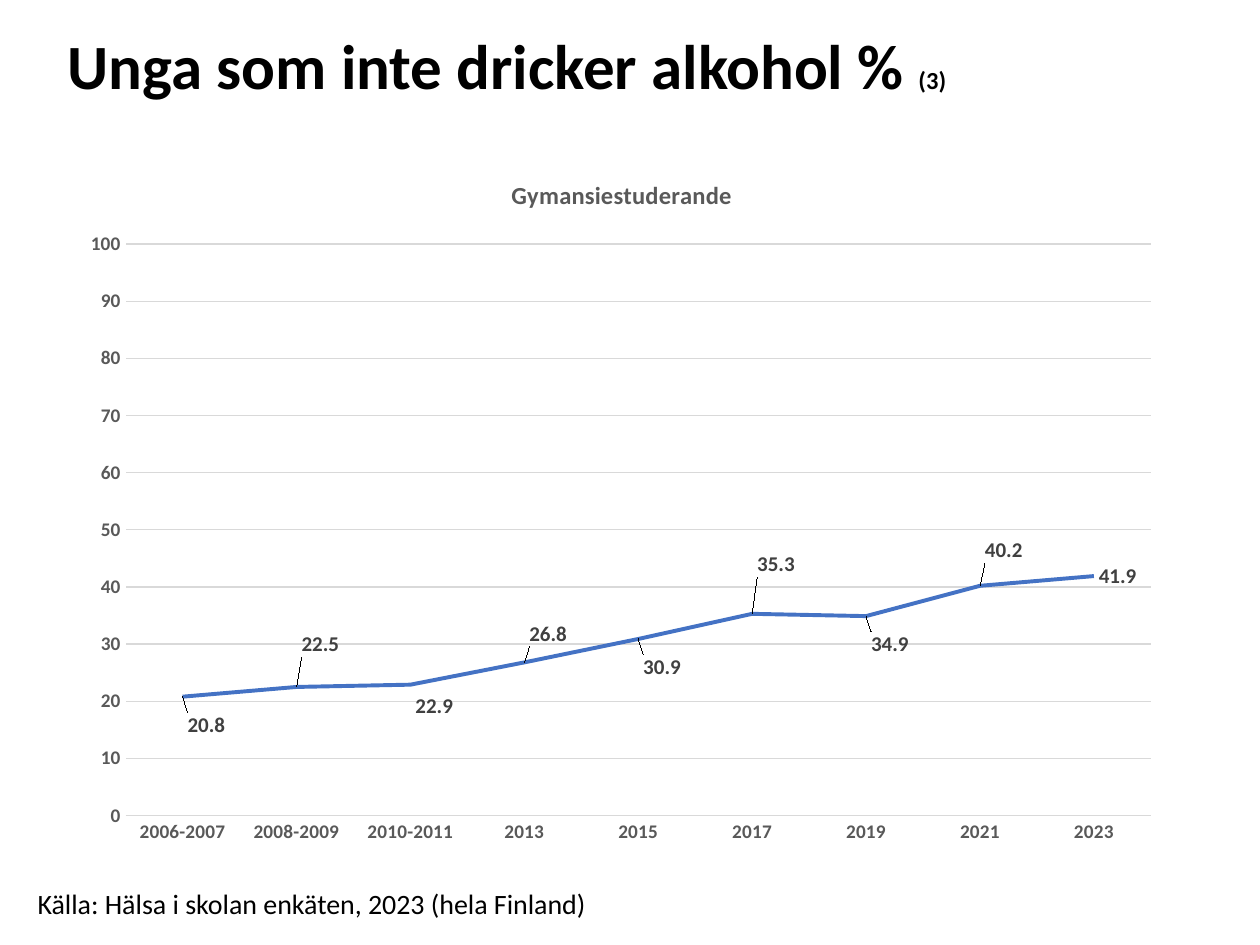
from lxml.etree import SubElement
from pptx import Presentation
from pptx.chart.data import CategoryChartData
from pptx.dml.color import RGBColor
from pptx.enum.chart import XL_CHART_TYPE as ChartType
from pptx.enum.chart import XL_LABEL_POSITION as LabelPos
from pptx.enum.chart import XL_TICK_MARK as Tick
from pptx.oxml import parse_xml
from pptx.oxml.ns import nsdecls, qn
from pptx.util import Inches, Pt

TITLE = [("Unga som inte dricker alkohol % ", 36), ("(3)", 14)]
SOURCE = "Källa: Hälsa i skolan enkäten, 2023 (hela Finland)"
CHART_TITLE = "Gymansiestuderande"
RATES = [
    ("2006-2007", 20.8, 0.04),
    ("2008-2009", 22.5, -0.06),
    ("2010-2011", 22.9, 0.03),
    ("2013", 26.8, -0.04),
    ("2015", 30.9, 0.04),
    ("2017", 35.3, -0.07),
    ("2019", 34.9, 0.04),
    ("2021", 40.2, -0.05),
    ("2023", 41.9, 0),
]
PLOT = {"x": 0.05, "y": 0.13, "w": 0.93, "h": 0.81}

BLACK = RGBColor(0, 0, 0)
LABEL = RGBColor(0x40, 0x40, 0x40)
GREY = RGBColor(0x59, 0x59, 0x59)
GRID = RGBColor(0xD9, 0xD9, 0xD9)
BLUE = RGBColor(0x44, 0x72, 0xC4)
FONT = "Calibri"


def set_font(font, size, color, bold=False):
    font.name, font.size, font.bold = FONT, Pt(size), bold
    font.color.rgb = color


def add_text(slide, box, runs, bold=False):
    tf = slide.shapes.add_textbox(*map(Inches, box)).text_frame
    tf.word_wrap = True
    p = tf.paragraphs[0]
    set_font(p.font, runs[0][1], BLACK, bold)
    for text, size in runs:
        r = p.add_run()
        r.text = text
        r.font.size = Pt(size)
    return p


def manual_layout(**values):
    layout = parse_xml(f"<c:layout {nsdecls('c')}><c:manualLayout/></c:layout>")
    for tag, value in values.items():
        SubElement(layout[0], qn(f"c:{tag}")).set("val", str(value))
    return layout


def style_line(line, color, width):
    line.color.rgb = color
    line.width = Pt(width)


def add_rate_chart(slide, box):
    data = CategoryChartData(number_format="0.0")
    data.categories = [year for year, _, _ in RATES]
    data.add_series("Series 1", [rate for _, rate, _ in RATES])
    chart = slide.shapes.add_chart(
        ChartType.LINE, *map(Inches, box), data).chart
    set_font(chart.font, 10, BLACK)
    chart.has_legend = False
    chart.has_title = True
    p = chart.chart_title.text_frame.paragraphs[0]
    p.text = CHART_TITLE
    set_font(p.font, 14, GREY, True)
    chart.chart_title.include_in_layout = False

    years, rates = chart.category_axis, chart.value_axis
    for axis in (years, rates):
        axis.major_tick_mark = axis.minor_tick_mark = Tick.NONE
        set_font(axis.tick_labels.font, 11, GREY, True)
    style_line(years.format.line, GRID, 0.75)
    rates.minimum_scale, rates.maximum_scale, rates.major_unit = 0, 100, 10
    rates.tick_labels.number_format = "0"
    rates.tick_labels.number_format_is_linked = False
    rates.format.line.fill.background()
    style_line(rates.major_gridlines.format.line, GRID, 0.75)

    plot = chart.plots[0]
    plot.vary_by_categories = False
    series = plot.series[0]
    series.smooth = False
    style_line(series.format.line, BLUE, 2.25)
    labels = series.data_labels
    labels.show_value = True
    labels.number_format = "#,##0.0"
    labels.number_format_is_linked = False
    labels.position = LabelPos.RIGHT
    set_font(labels.font, 12, LABEL, True)
    for i, (_, _, shift) in enumerate(RATES):
        if shift:
            label = series.points[i].data_label
            set_font(label.font, 12, LABEL, True)
            label.position = LabelPos.RIGHT
    for item in chart.element.iter(qn("c:dLbl")):
        idx = item.find(qn("c:idx"))
        shift = RATES[int(idx.get("val"))][2]
        idx.addnext(manual_layout(x=0, y=shift))

    area = chart.element.find(f".//{qn('c:plotArea')}")
    for old in area.findall(qn("c:layout")):
        area.remove(old)
    area.insert(0, manual_layout(
        layoutTarget="inner", xMode="edge", yMode="edge", **PLOT))


def main():
    prs = Presentation()
    prs.slide_width, prs.slide_height = Inches(10), Inches(7.5)
    slide = prs.slides.add_slide(prs.slide_layouts[6])
    title = add_text(slide, (0.44, 0.23, 9.13, 0.97), TITLE, bold=True)
    title.line_spacing = 0.9
    add_rate_chart(slide, (0.56, 1.21, 8.75, 5.6))
    add_text(slide, (0.2, 6.99, 4.8, 0.37), [(SOURCE, 16)])
    prs.save("out.pptx")


if __name__ == "__main__":
    main()
